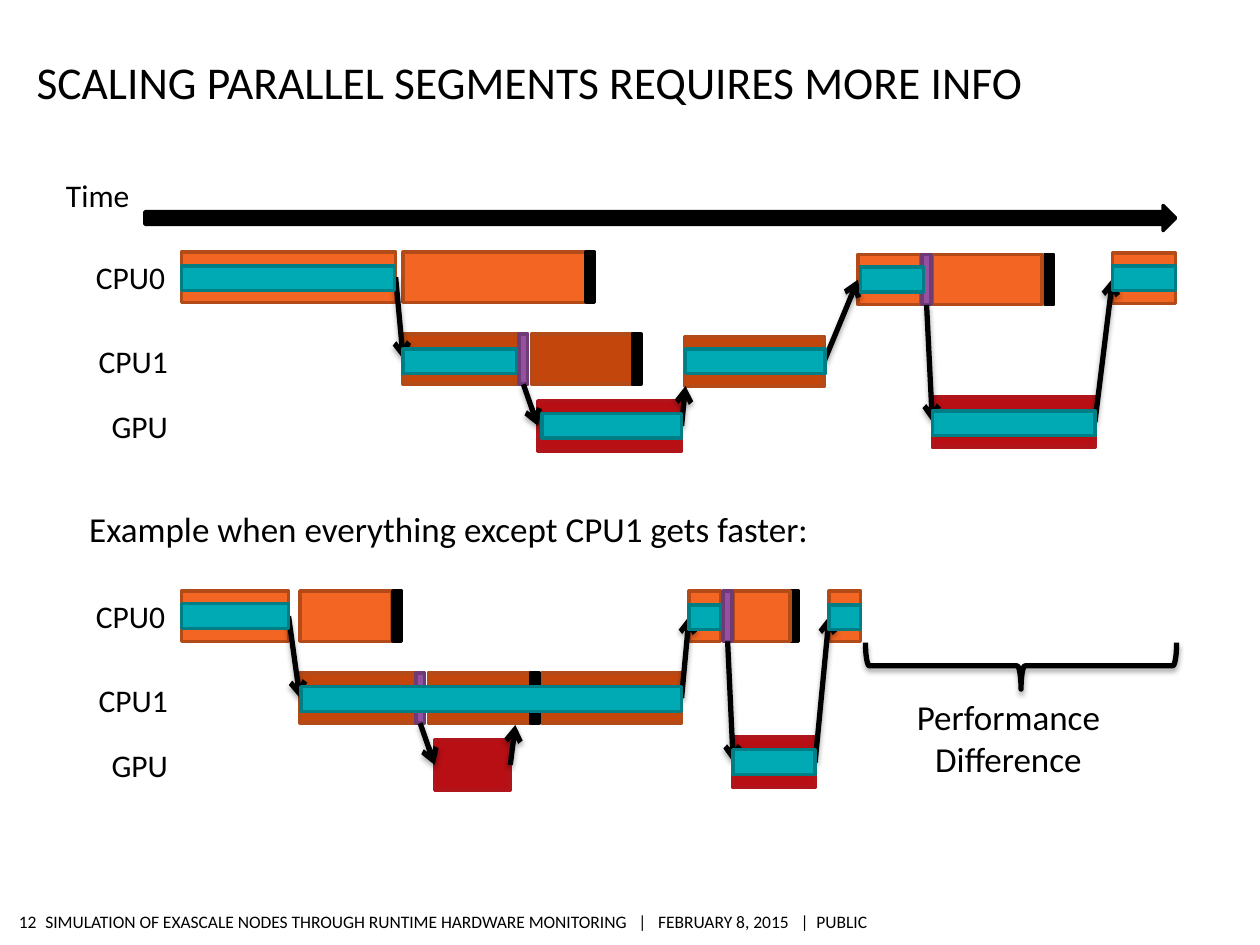
from dataclasses import dataclass
from lxml import etree
from pptx import Presentation
from pptx import util as u
from pptx.dml.color import RGBColor
from pptx.enum import shapes, text
from pptx.oxml import ns

Pt = u.Pt
Kind = shapes.MSO_SHAPE
LEFT, MID, RIGHT = text.PP_ALIGN.LEFT, text.PP_ALIGN.CENTER, text.PP_ALIGN.RIGHT
BLACK = "000000"
BOTTOM, WEST, EAST = 2, 1, 3  # connection sites
TINTS = {  # fill and line
    "cpu0": ("F26522", "B34B19"),
    "cpu1": ("C3470C", "B34B19"),
    "gpu": ("B80F15", "AF151B"),
    "call": ("9650A0", "6F3B76"),
    "end": (BLACK, BLACK),
    "busy": ("00AAB5", "007E86"),
}
ROWS = (0, 46.8, 85)  # CPU0, CPU1, GPU below the top of a chart
HIGH, THIN, INSET = 28.8, 14.2, 7.9


@dataclass
class Bar:
    tint: str
    row: int
    x: float
    w: float = 5
    dy: float = 0
    name: str = ""


@dataclass
class Chart:
    top: float
    back: float  # x of the return to CPU1
    bars: list[Bar]
    busy: list[Bar]


@dataclass
class Label:
    words: str
    x: float
    y: float
    w: float
    h: float
    size: float
    align: text.PP_ALIGN = LEFT


LINKS = (  # bar names, from right or bottom to left
    ("start", EAST, "fork"),
    ("call1", BOTTOM, "gpu1"),
    ("join", EAST, "next"),
    ("call2", BOTTOM, "gpu2"),
    ("gpu2", EAST, "last"),
)

CHARTS = (
    Chart(144, 391.7, [
        Bar("cpu0", 0, 103.7, 122.4, name="start"),
        Bar("cpu1", 1, 230.4, 66.2, name="fork"),
        Bar("gpu", 2, 307.4, 82.1, name="gpu1"),
        Bar("cpu0", 0, 230.4, 104.4),
        Bar("end", 0, 334.8),
        Bar("cpu1", 1, 303.8, 57.6),
        Bar("call", 1, 296.6, name="call1"),
        Bar("cpu1", 1, 391, 79.9, 1.4, "join"),
        Bar("cpu0", 0, 490.3, 36, 1.4, "next"),
        Bar("gpu", 2, 532.8, 92.9, -2.2, "gpu2"),
        Bar("cpu0", 0, 635.8, 36, 0.7, "last"),
        Bar("end", 0, 596.9, dy=1.4),
        Bar("cpu0", 0, 532.8, 62.6, 1.4),
        Bar("call", 0, 527, dy=1.4, name="call2"),
        Bar("end", 1, 361.4),
    ], [
        Bar("busy", 0, 103.7, 121.7),
        Bar("busy", 1, 230.4, 64.8, 0.7),
        Bar("busy", 2, 309.6, 79.9, -0.7),
        Bar("busy", 1, 391.7, 79.9, 0.7),
        Bar("busy", 0, 491.8, 36, 0.7),
        Bar("busy", 2, 532.8, 92.9, -2.2),
        Bar("busy", 0, 635.8, 36),
    ]),
    Chart(337.7, 294.5, [
        Bar("cpu0", 0, 103.7, 61.2, name="start"),
        Bar("cpu1", 1, 171.4, 66.2, name="fork"),
        Bar("gpu", 2, 248.4, 43.2, name="gpu1"),
        Bar("cpu0", 0, 171.4, 52.6),
        Bar("end", 0, 224.6),
        Bar("cpu1", 1, 244.8, 57.6),
        Bar("call", 1, 237.6, name="call1"),
        Bar("cpu1", 1, 309.6, 79.9, name="join"),
        Bar("cpu0", 0, 393.8, 18, name="next"),
        Bar("gpu", 2, 419, 46.8, -1.4, "gpu2"),
        Bar("cpu0", 0, 473.8, 18, name="last"),
        Bar("end", 0, 451.4),
        Bar("cpu0", 0, 419, 32.4),
        Bar("call", 0, 413.3, name="call2"),
        Bar("end", 1, 303.1),
    ], [
        Bar("busy", 0, 103.7, 61.2, -0.7),
        Bar("busy", 1, 172.1, 217.4),
        Bar("busy", 0, 393.8, 18),
        Bar("busy", 2, 419, 46.8, -2.2),
        Bar("busy", 0, 473.8, 18),
    ]),
)

LABELS = (
    Label("Time", 28.8, 97.2, 54, 28.8, 18, MID),
    Label("Example when everything except CPU1 gets faster:",
          43.9, 286.6, 501.8, 31.7, 20),
    Label("Performance Difference", 494.6, 393.8, 163.4, 55.4, 20, MID),
)


def tint(hue: str) -> RGBColor:
    return RGBColor.from_string(hue)


def shade(shape) -> None:
    """Add a soft shadow below the shape."""
    fx = etree.SubElement(shape._element.spPr, ns.qn("a:effectLst"))
    drop = etree.SubElement(fx, ns.qn("a:outerShdw"), blurRad=str(Pt(3.1)),
                            dist=str(Pt(1.8)), dir="5400000", rotWithShape="0")
    hue = etree.SubElement(drop, ns.qn("a:srgbClr"), val=BLACK)
    etree.SubElement(hue, ns.qn("a:alpha"), val="35000")


def write(page, item: Label, anchor=text.MSO_ANCHOR.TOP, pads=None, wrap=True) -> None:
    box = page.shapes.add_textbox(Pt(item.x), Pt(item.y), Pt(item.w), Pt(item.h))
    frame = box.text_frame
    frame.word_wrap, frame.vertical_anchor = wrap, anchor
    if pads:
        frame.margin_left = frame.margin_right = 0
        frame.margin_top, frame.margin_bottom = map(Pt, pads)
    para = frame.paragraphs[0]
    para.text, para.alignment = item.words, item.align
    para.font.name, para.font.size = "Calibri", Pt(item.size)
    para.font.color.rgb = tint(BLACK)


def solid(page, kind, x: float, y: float, w: float, h: float, fill: str, edge: str):
    shape = page.shapes.add_shape(kind, Pt(x), Pt(y), Pt(w), Pt(h))
    shape.shadow.inherit = False
    shape.fill.solid()
    shape.fill.fore_color.rgb = tint(fill)
    shape.line.color.rgb, shape.line.width = tint(edge), Pt(2)
    return shape


def block(page, bar: Bar, top: float, h: float):
    y = top + ROWS[bar.row] + bar.dy
    return solid(page, Kind.RECTANGLE, bar.x, y, bar.w, h, *TINTS[bar.tint])


def link(page, start, site: int, goal=None, spot=(0, 0)) -> None:
    """Arrow from a bar to the left side of another, or to a free spot."""
    line = page.shapes.add_connector(shapes.MSO_CONNECTOR.STRAIGHT, 0, 0, *map(Pt, spot))
    line.begin_connect(start, site)
    if goal is not None:
        line.end_connect(goal, WEST)
    line.line.color.rgb, line.line.width = tint(BLACK), Pt(3)
    etree.SubElement(line.line._get_or_add_ln(), ns.qn("a:tailEnd"), type="arrow")
    shade(line)


def draw(page, chart: Chart) -> None:
    # Row names
    for name, x, dy in zip(("CPU0", "CPU1", "GPU"), (36.7, 38.2, 38.2), (0, 1.4, 0)):
        row = ("CPU0", "CPU1", "GPU").index(name)
        write(page, Label(name, x, chart.top + ROWS[row] + dy, 64.8, 28.8, 18, RIGHT))
    # Segments
    made = {}
    for bar in chart.bars:
        shape = block(page, bar, chart.top, HIGH)
        if bar.name:
            made[bar.name] = shape
    # Dependencies
    for start, site, goal in LINKS:
        link(page, made[start], site, made[goal])
    link(page, made["gpu1"], EAST, spot=(chart.back, chart.top + 76.6))
    # Critical path
    for bar in chart.busy:
        block(page, bar, chart.top + INSET, THIN)


def main() -> None:
    deck = Presentation()
    deck.slide_width, deck.slide_height = Pt(720), Pt(540)
    page = deck.slides.add_slide(deck.slide_layouts[6])

    # Footer and title
    middle = text.MSO_ANCHOR.MIDDLE
    foot = ("SIMULATION OF EXASCALE NODES THROUGH RUNTIME HARDWARE MONITORING"
            "   |   FEBRUARY 8, 2015   |  PUBLIC")
    write(page, Label(foot, 25.9, 517, 488.9, 18.7, 10), middle, (2.9, 2.9), False)
    write(page, Label("12", 9.4, 517, 11.5, 18.7, 10, RIGHT), middle, (2.9, 2.9), False)
    write(page, Label("SCALING PARALLEL SEGMENTS REQUIRES MORE INFO",
                      20.9, 24.5, 604.8, 37.4, 26), text.MSO_ANCHOR.BOTTOM, (3.6, 0))

    # Time axis and charts
    solid(page, Kind.RIGHT_ARROW, 82.8, 117.4, 589, 14.4, BLACK, BLACK)
    for chart in CHARTS:
        draw(page, chart)
    for item in LABELS:
        write(page, item)

    # Brace over the time saved
    brace = page.shapes.add_shape(Kind.LEFT_BRACE, Pt(570.2), Pt(291.6), Pt(26.6), Pt(177.8))
    brace.rotation = 270
    brace.fill.background()
    brace.line.color.rgb, brace.line.width = tint(BLACK), Pt(3)
    shade(brace)

    deck.save("out.pptx")


if __name__ == "__main__":
    main()
